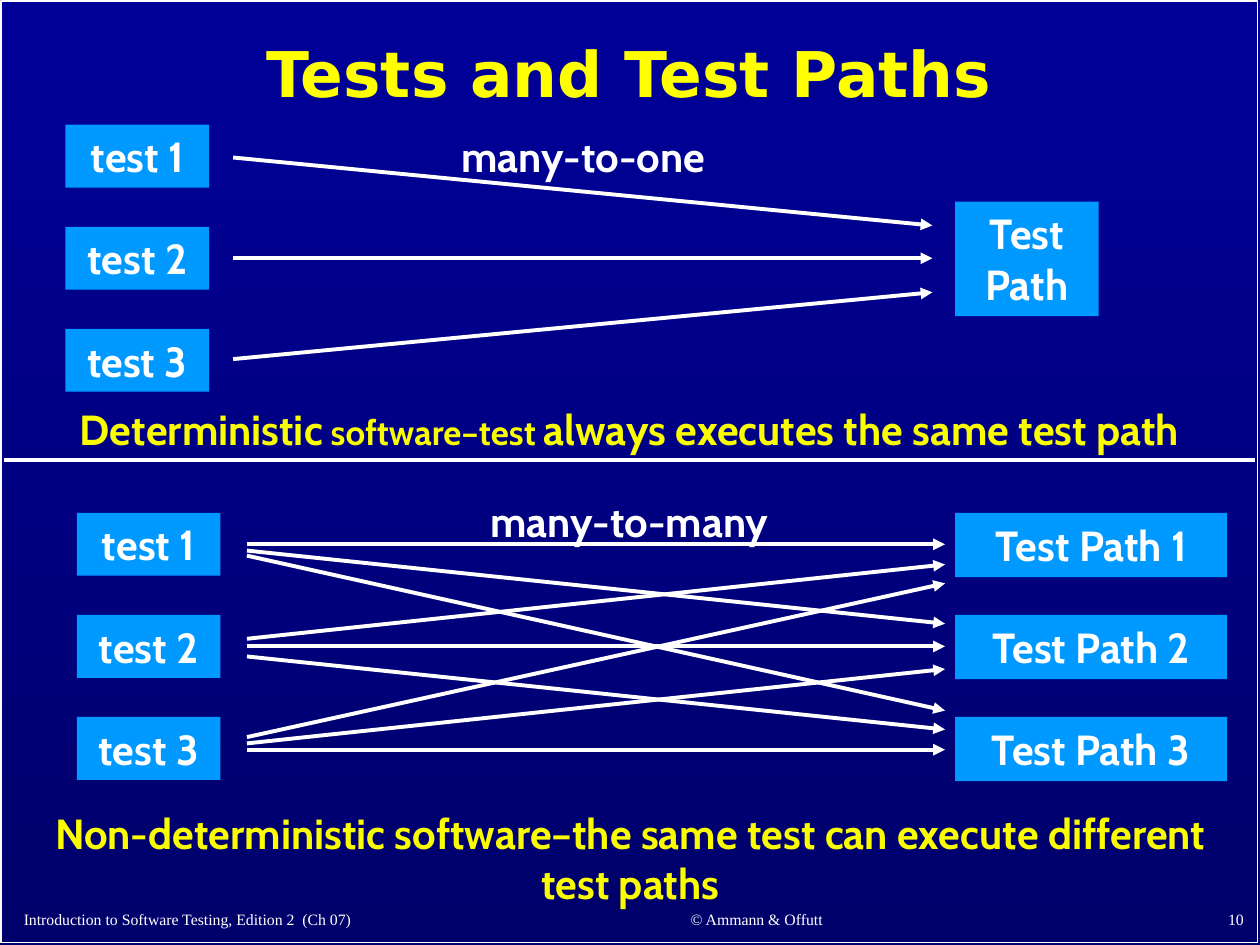
from lxml.etree import SubElement
from pptx import Presentation
from pptx.dml.color import RGBColor
from pptx.enum.shapes import MSO_CONNECTOR, MSO_SHAPE
from pptx.enum.text import MSO_ANCHOR, MSO_AUTO_SIZE, PP_ALIGN
from pptx.oxml.ns import qn
from pptx.util import Inches, Pt

WHITE, BLUE, YELLOW, CAPTION = "FFFFFF", "0099FF", "FFFF00", "FAFD00"
LEFT, CENTER, RIGHT = PP_ALIGN.LEFT, PP_ALIGN.CENTER, PP_ALIGN.RIGHT


def color(code):
    """Turn a hex string into a colour."""
    return RGBColor.from_string(code)


class Deck:
    """Holds the style and the current slide."""

    body_font, footer_font, title_font = "Cabin", "Times New Roman", "DejaVu Sans"
    body_size, footer_size, title_size = 24, 9, 36

    def __init__(self):
        """Open a 4:3 presentation with one title slide."""
        self.presentation = Presentation()
        self.presentation.slide_width = Inches(10)
        self.presentation.slide_height = Inches(7.5)
        self.slide = self.presentation.slides.add_slide(self.presentation.slide_layouts[5])

    def background(self, top, bottom):
        """Fill the slide with a vertical gradient."""
        fill = self.slide.background.fill
        fill.gradient()
        fill.gradient_angle = 270
        for stop, code in zip(fill.gradient_stops, (top, bottom)):
            stop.color.rgb = color(code)

    def style(self, paragraph, font, size, code, bold, align):
        """Format a whole paragraph."""
        paragraph.alignment = align
        paragraph.font.name = font
        if size:
            paragraph.font.size = Pt(size)
        paragraph.font.bold = bold
        paragraph.font.color.rgb = color(code)

    def title(self, text, left, top, width, height):
        """Place the slide title."""
        heading = self.slide.shapes.title
        heading.left, heading.top = Inches(left), Inches(top)
        heading.width, heading.height = Inches(width), Inches(height)
        frame = heading.text_frame
        frame.text = text
        frame.auto_size = MSO_AUTO_SIZE.NONE
        frame.vertical_anchor = MSO_ANCHOR.MIDDLE
        frame.paragraphs[0].line_spacing = 0.9
        self.style(frame.paragraphs[0], self.title_font, self.title_size, YELLOW, True, CENTER)

    def rectangle(self, left, top, width, height):
        """Add a rectangle without shadow."""
        panel = self.slide.shapes.add_shape(
            MSO_SHAPE.RECTANGLE, Inches(left), Inches(top), Inches(width), Inches(height))
        panel.shadow.inherit = False
        return panel

    def border(self, left, top, width, height):
        """Outline the slide."""
        outline = self.rectangle(left, top, width, height)
        outline.fill.background()
        outline.line.color.rgb = color(WHITE)
        outline.line.width = Pt(1)

    def box(self, text, left, top, width, height=0.5):
        """Add a labelled blue box."""
        node = self.rectangle(left, top, width, height)
        node.fill.solid()
        node.fill.fore_color.rgb = color(BLUE)
        node.line.fill.background()
        frame = node.text_frame
        frame.text = text
        frame.word_wrap = True
        frame.vertical_anchor = MSO_ANCHOR.TOP
        self.style(frame.paragraphs[0], self.body_font, self.body_size, WHITE, True, CENTER)

    def text_frame(self, left, top, width, height, anchor=MSO_ANCHOR.TOP):
        """Add a wrapping text box and return its frame."""
        frame = self.slide.shapes.add_textbox(
            Inches(left), Inches(top), Inches(width), Inches(height)).text_frame
        frame.word_wrap = True
        frame.vertical_anchor = anchor
        return frame

    def label(self, text, left, top, width, height, code=WHITE):
        """Add a bold centred label."""
        paragraph = self.text_frame(left, top, width, height).paragraphs[0]
        paragraph.text = text
        self.style(paragraph, self.body_font, self.body_size, code, True, CENTER)

    def mixed_label(self, pieces, left, top, width, height, code):
        """Add a label whose pieces differ in size."""
        paragraph = self.text_frame(left, top, width, height).paragraphs[0]
        self.style(paragraph, self.body_font, None, code, True, CENTER)
        for text, size in pieces:
            piece = paragraph.add_run()
            piece.text = text
            piece.font.size = Pt(size)

    def footer(self, text, left, top, width, height, align):
        """Add a small footer text."""
        paragraph = self.text_frame(left, top, width, height, MSO_ANCHOR.BOTTOM).paragraphs[0]
        paragraph.text = text
        self.style(paragraph, self.footer_font, self.footer_size, WHITE, False, align)

    def line(self, x1, y1, x2, y2, arrow=True):
        """Add a white line, with an arrowhead unless told otherwise."""
        link = self.slide.shapes.add_connector(
            MSO_CONNECTOR.STRAIGHT, Inches(x1), Inches(y1), Inches(x2), Inches(y2))
        link.line.color.rgb = color(WHITE)
        link.line.width = Pt(2.25)
        if arrow:
            SubElement(link.get_or_add_ln(), qn("a:tailEnd"), type="triangle")
        SubElement(link._element.spPr, qn("a:effectLst"))


def main():
    """Build the slide and save it."""
    deck = Deck()
    deck.background("000099", "00006B")
    deck.border(0.01, 0.01, 9.97, 7.47)
    deck.footer("Introduction to Software Testing, Edition 2  (Ch 07)", 0.09, 7.12, 4.12, 0.3, LEFT)
    deck.footer("© Ammann & Offutt", 4.42, 7.11, 3.17, 0.31, CENTER)
    deck.footer("10", 7.89, 7.1, 2.08, 0.32, RIGHT)
    deck.title("Tests and Test Paths", 0.09, 0.11, 9.8, 1)

    deck.label("many-to-one", 3.53, 0.99, 2.2, 0.5)
    for row, (start, end) in enumerate([(1.25, 1.79), (2.05, 2.05), (2.85, 2.32)]):
        deck.box(f"test {row + 1}", 0.52, 0.99 + 0.81 * row, 1.14)
        deck.line(1.85, start, 7.4, end)
    deck.box("Test Path", 7.58, 1.6, 1.14, 0.91)
    deck.mixed_label(
        [("Deterministic", 24), (" software–test ", 20), ("always executes the same test path", 24)],
        0.03, 3.15, 9.93, 0.51, CAPTION)
    deck.line(0.03, 3.65, 9.96, 3.65, arrow=False)

    deck.label("many-to-many", 2.98, 3.88, 4.03, 0.51)
    test_exits = [(4.32, 4.37, 4.41), (5.07, 5.13, 5.21), (5.85, 5.9, 5.95)]
    path_entries = [(4.32, 4.48, 4.63), (4.95, 5.13, 5.31), (5.64, 5.79, 5.95)]
    for test, exits in enumerate(test_exits):
        top = 4.07 + 0.81 * test
        deck.box(f"test {test + 1}", 0.61, top, 1.14)
        deck.box(f"Test Path {test + 1}", 7.58, top, 2.16, 0.51)
        for start, entries in zip(exits, path_entries):
            deck.line(1.96, start, 7.5, entries[test])
    deck.label("Non-deterministic software–the same test can execute different test paths",
               0.14, 6.36, 9.72, 0.91, CAPTION)

    deck.presentation.save("out.pptx")


if __name__ == "__main__":
    main()
